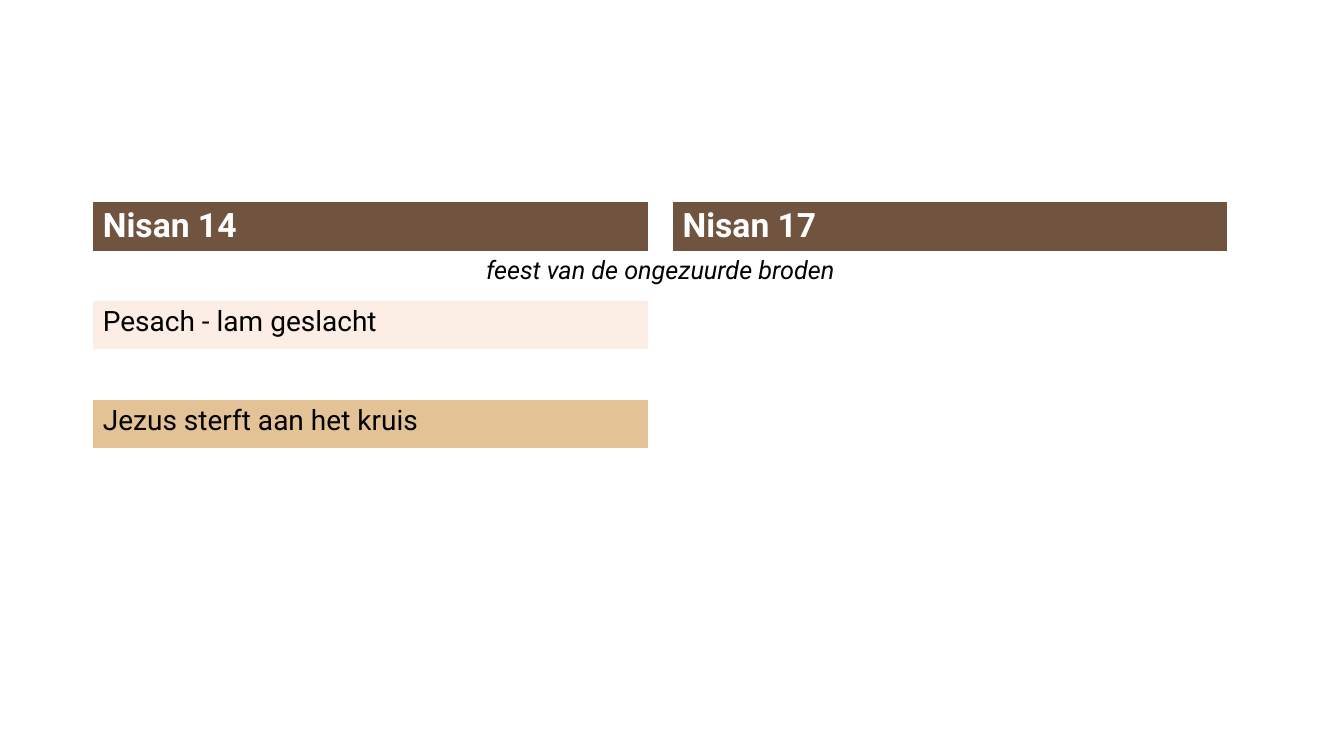
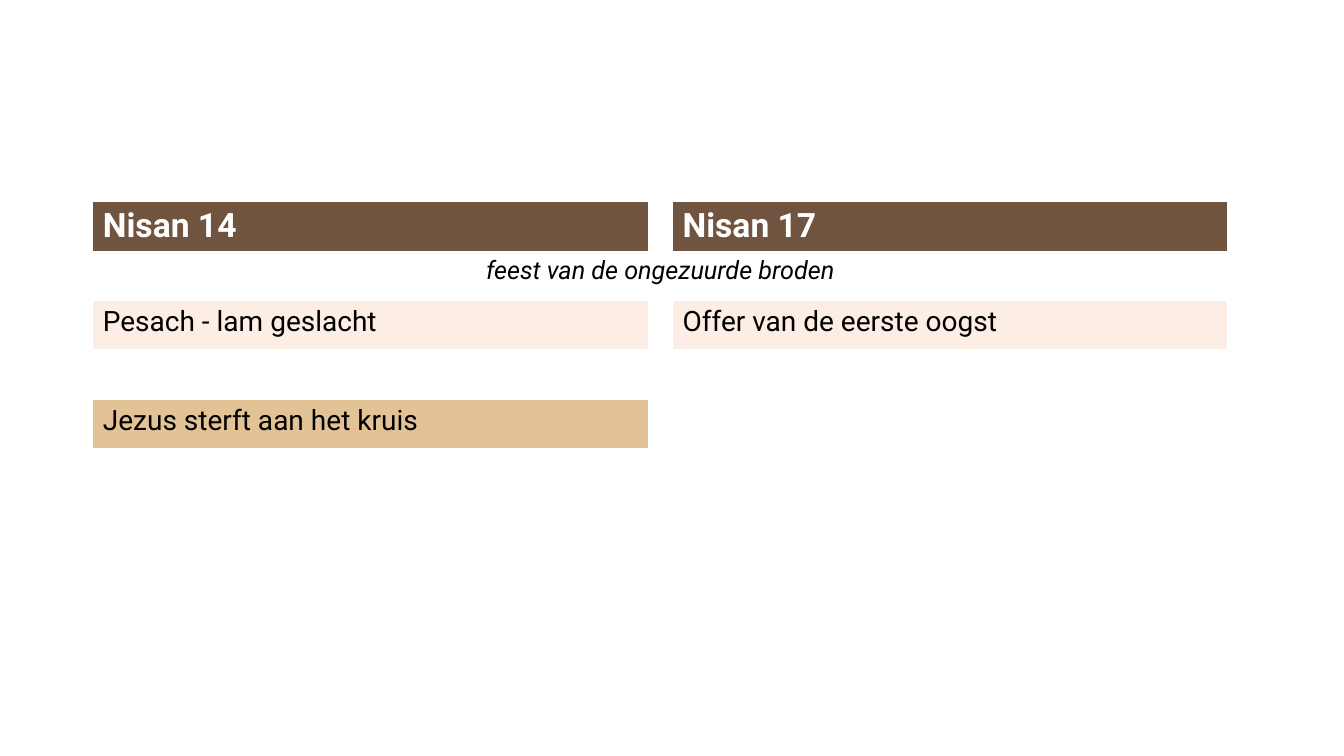
from pptx import Presentation
from pptx.dml.color import RGBColor
from pptx.enum.text import PP_ALIGN
from pptx.util import Inches, Pt

WHITE, BLACK, BROWN, BLUSH, SAND = "FFFFFF", "000000", "70543F", "FCEEE4", "E3C296"

# Cell styles: fill, text colour, alignment and font format
STYLES = {
    "day": (BROWN, WHITE, PP_ALIGN.LEFT, {"size": Pt(24), "bold": True}),
    "feast": (WHITE, BLACK, PP_ALIGN.CENTER, {"size": Pt(18), "italic": True}),
    "ritual": (BLUSH, BLACK, PP_ALIGN.LEFT, {"size": Pt(20)}),
    "jesus": (SAND, BLACK, PP_ALIGN.LEFT, {"size": Pt(20)}),
}

# Each slide shows these cells: (row, column): (style, text)
COMMON = {
    (0, 0): ("day", "Nisan 14"),
    (0, 2): ("day", "Nisan 17"),
    (1, 0): ("feast", "feest van de ongezuurde broden"),
    (2, 0): ("ritual", "Pesach - lam geslacht"),
    (4, 0): ("jesus", "Jezus sterft aan het kruis"),
}
SLIDES = [
    COMMON,
    {**COMMON, (2, 2): ("ritual", "Offer van de eerste oogst")},
]

COL_WIDTHS = [5.51, 0.24, 5.51, 0.23]
ROWS, ROW_HEIGHT = 7, 0.49
LEFT, TOP = 0.92, 2


def rgb(value):
    return RGBColor.from_string(value)


def fill_cell(cell, color):
    cell.fill.solid()
    cell.fill.fore_color.rgb = rgb(color)


def write_cell(cell, style, text):
    fill, color, align, font = STYLES[style]
    fill_cell(cell, fill)
    p = cell.text_frame.paragraphs[0]
    p.alignment = align
    p.space_before = p.space_after = Pt(6)
    r = p.add_run()
    r.text = text
    r.font.color.rgb = rgb(color)
    for name, value in {"name": "Roboto", "bold": False, "italic": False, **font}.items():
        setattr(r.font, name, value)


def add_calendar(s, entries):
    """Add the table of days; its default style draws the white borders."""
    table = s.shapes.add_table(
        ROWS, len(COL_WIDTHS), Inches(LEFT), Inches(TOP),
        Inches(sum(COL_WIDTHS)), Inches(ROWS * ROW_HEIGHT)).table
    table.horz_banding = False
    for col, width in zip(table.columns, COL_WIDTHS):
        col.width = Inches(width)
    for row in table.rows:
        row.height = Inches(ROW_HEIGHT)
    for cell in table.iter_cells():
        fill_cell(cell, WHITE)
    table.cell(1, 0).merge(table.cell(1, 2))
    for place, (style, text) in entries.items():
        write_cell(table.cell(*place), style, text)


def main():
    prs = Presentation()
    prs.slide_width, prs.slide_height = Inches(13.33), Inches(7.5)
    for entries in SLIDES:
        add_calendar(prs.slides.add_slide(prs.slide_layouts[6]), entries)
    prs.save("out.pptx")


if __name__ == "__main__":
    main()
